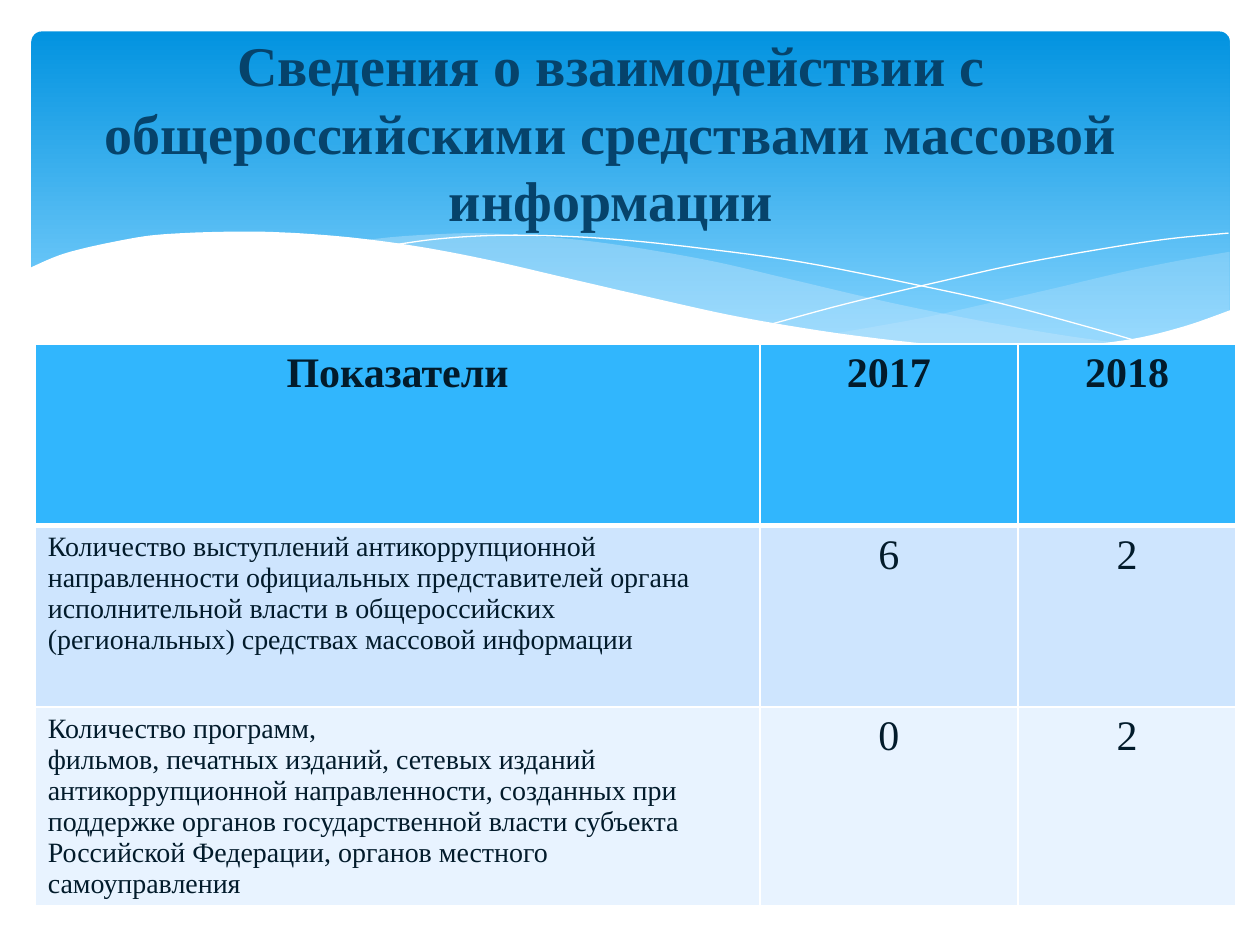
from dataclasses import dataclass

from lxml import etree
from pptx import Presentation
from pptx.dml.color import RGBColor
from pptx.enum.shapes import MSO_SHAPE
from pptx.enum.text import MSO_ANCHOR, MSO_AUTO_SIZE, PP_ALIGN
from pptx.oxml.ns import qn
from pptx.util import Pt

PX = 9144  # 100 px to the inch
FONT = "Times New Roman"
CENTER, LEFT = PP_ALIGN.CENTER, PP_ALIGN.LEFT
TITLE_ONLY = 5
CURVE_STEPS = 6
COLORS = {
    "sky_top": "0293E0",
    "sky_bottom": "83D3FE",
    "wave": "C6E7FC",
    "white": "FFFFFF",
    "title": "06436B",
    "text": "021B2B",
    "header": "31B6FD",
    "row_dark": "CEE5FE",
    "row_light": "E8F3FF",
}
Points = list[tuple[float, float]]


@dataclass
class Wave:
    """Smooth curves joined by straight lines; filled, or a hairline if open."""
    curves: list[Points]
    filled: bool = True
    color: str = "white"
    opacity: int = 100


@dataclass
class Row:
    cells: tuple[str, ...]
    fill: str
    header: bool = False


WAVES = [
    Wave([[(975, 200), (935, 207), (891, 216), (832, 230), (779, 242), (729, 253), (661, 265)],
          [(661, 265), (705, 271), (757, 276), (814, 278), (872, 274), (921, 265),
           (949, 257), (976, 247)],
          [(976, 200)]], color="wave", opacity=29),
    Wave([[(893, 273), (837, 265), (775, 254), (706, 240), (629, 222), (569, 208), (514, 198),
           (465, 191), (420, 187), (380, 185), (344, 186), (313, 188), (286, 191)],
          [(286, 191), (342, 199), (404, 211), (449, 222), (530, 240), (601, 255), (665, 266),
           (722, 274), (773, 277), (818, 278), (857, 277), (893, 273)]],
         color="wave", opacity=40),
    Wave([[(309, 195), (344, 190), (387, 187), (433, 187), (489, 190), (556, 197), (636, 208),
           (727, 226), (795, 241), (869, 261), (907, 272)]], filled=False),
    Wave([[(613, 257), (672, 241), (748, 223), (806, 210), (866, 199), (924, 190),
           (975, 185)]], filled=False),
    Wave([[(977, 246), (940, 259), (899, 269), (850, 275), (809, 277), (761, 275), (708, 270),
           (648, 262), (579, 250), (503, 233), (447, 220), (391, 207), (340, 197), (292, 190),
           (250, 186), (211, 184), (177, 184), (146, 185), (119, 187), (95, 191), (67, 197),
           (46, 203), (23, 213)],
          [(23, 329)], [(977, 329)]]),
]

COLUMN_WIDTHS = [575, 205, 173]
ROW_HEIGHT = 144
ROWS = [
    Row(("Показатели", "2017", "2018"), "header", header=True),
    Row(("Количество выступлений антикоррупционной направленности официальных "
         "представителей органа исполнительной власти в общероссийских "
         "(региональных) средствах массовой информации", "6", "2"), "row_dark"),
    Row(("Количество программ,\nфильмов, печатных изданий, сетевых изданий "
         "антикоррупционной направленности, созданных при поддержке органов "
         "государственной власти субъекта Российской Федерации, органов местного "
         "самоуправления", "0", "2"), "row_light"),
]


def rgb(name: str) -> RGBColor:
    return RGBColor.from_string(COLORS[name])


def smooth(points: Points) -> Points:
    """Run a Catmull-Rom curve through the points."""
    padded = [points[0], *points, points[-1]]
    result = [points[0]]
    for a, b, c, d in zip(padded, padded[1:], padded[2:], padded[3:]):
        for step in range(1, CURVE_STEPS + 1):
            t = step / CURVE_STEPS
            result.append(tuple(
                (2 * q + (r - p) * t + (2 * p - 5 * q + 4 * r - s) * t ** 2
                 + (3 * q - p - 3 * r + s) * t ** 3) / 2
                for p, q, r, s in zip(a, b, c, d)))
    return result


def style_text(frame, size: int, color: str, bold: bool, align) -> None:
    for para in frame.paragraphs:
        para.alignment = align
        for span in para.runs:
            span.font.name = FONT
            span.font.size = Pt(size)
            span.font.bold = bold
            span.font.color.rgb = rgb(color)


def add_sky(page) -> None:
    sky = page.shapes.add_shape(MSO_SHAPE.ROUNDED_RECTANGLE, 25 * PX, 25 * PX, 951 * PX, 270 * PX)
    sky.adjustments[0] = 0.03
    sky.shadow.inherit = False
    sky.line.fill.background()
    sky.fill.gradient()
    sky.fill.gradient_angle = 270
    stops = zip(sky.fill.gradient_stops, ("sky_top", "sky_bottom"), (0, 0.9))
    for stop, color, position in stops:
        stop.color.rgb = rgb(color)
        stop.position = position


def add_wave(page, wave: Wave) -> None:
    points = [(round(x * PX), round(y * PX)) for curve in wave.curves for x, y in smooth(curve)]
    builder = page.shapes.build_freeform(*points[0])
    builder.add_line_segments(points[1:], close=wave.filled)
    shape = builder.convert_to_shape()
    shape.shadow.inherit = False
    if not wave.filled:
        shape.fill.background()
        shape.line.color.rgb = rgb(wave.color)
        shape.line.width = Pt(0)
        return
    shape.line.fill.background()
    shape.fill.solid()
    shape.fill.fore_color.rgb = rgb(wave.color)
    if wave.opacity < 100:
        color = shape.fill._xPr.find(qn("a:solidFill"))[0]
        etree.SubElement(color, qn("a:alpha"), val=str(wave.opacity * 1000))


def set_borders(cell, top: int, bottom: int) -> None:
    properties = cell._tc.get_or_add_tcPr()
    widths = {"a:lnL": 1, "a:lnR": 1, "a:lnT": top, "a:lnB": bottom}
    for index, (tag, width) in enumerate(widths.items()):
        line = etree.Element(qn(tag), w=str(Pt(width)))
        fill = etree.SubElement(line, qn("a:solidFill"))
        etree.SubElement(fill, qn("a:srgbClr"), val=COLORS["white"])
        properties.insert(index, line)


def add_indicators(page) -> None:
    frame = page.shapes.add_table(len(ROWS), len(COLUMN_WIDTHS), 28 * PX, 273 * PX,
                                  sum(COLUMN_WIDTHS) * PX, ROW_HEIGHT * len(ROWS) * PX)
    table = frame.table
    for column, width in zip(table.columns, COLUMN_WIDTHS):
        column.width = width * PX
    for i, row in enumerate(ROWS):
        for j, text in enumerate(row.cells):
            cell = table.cell(i, j)
            cell.fill.solid()
            cell.fill.fore_color.rgb = rgb(row.fill)
            set_borders(cell, 3 if i == 1 else 1, 3 if row.header else 1)
            cell.text_frame.text = text
            label = j == 0 and not row.header
            style_text(cell.text_frame, 16 if label else 24, "text", row.header,
                       LEFT if label else CENTER)


def add_title(page) -> None:
    title = page.shapes.title
    title.left, title.top, title.width, title.height = (n * PX for n in (35, 36, 900, 137))
    frame = title.text_frame
    frame.text = "Сведения о взаимодействии с общероссийскими средствами массовой информации"
    frame.word_wrap = True
    frame.auto_size = MSO_AUTO_SIZE.NONE
    frame.vertical_anchor = MSO_ANCHOR.MIDDLE
    style_text(frame, 32, "title", True, CENTER)
    # Bring the title in front of the background
    page.shapes._spTree.append(title._element)


def main() -> None:
    deck = Presentation()
    deck.slide_width, deck.slide_height = 1000 * PX, 750 * PX
    page = deck.slides.add_slide(deck.slide_layouts[TITLE_ONLY])
    add_sky(page)
    for wave in WAVES:
        add_wave(page, wave)
    add_indicators(page)
    add_title(page)
    deck.save("out.pptx")


if __name__ == "__main__":
    main()
